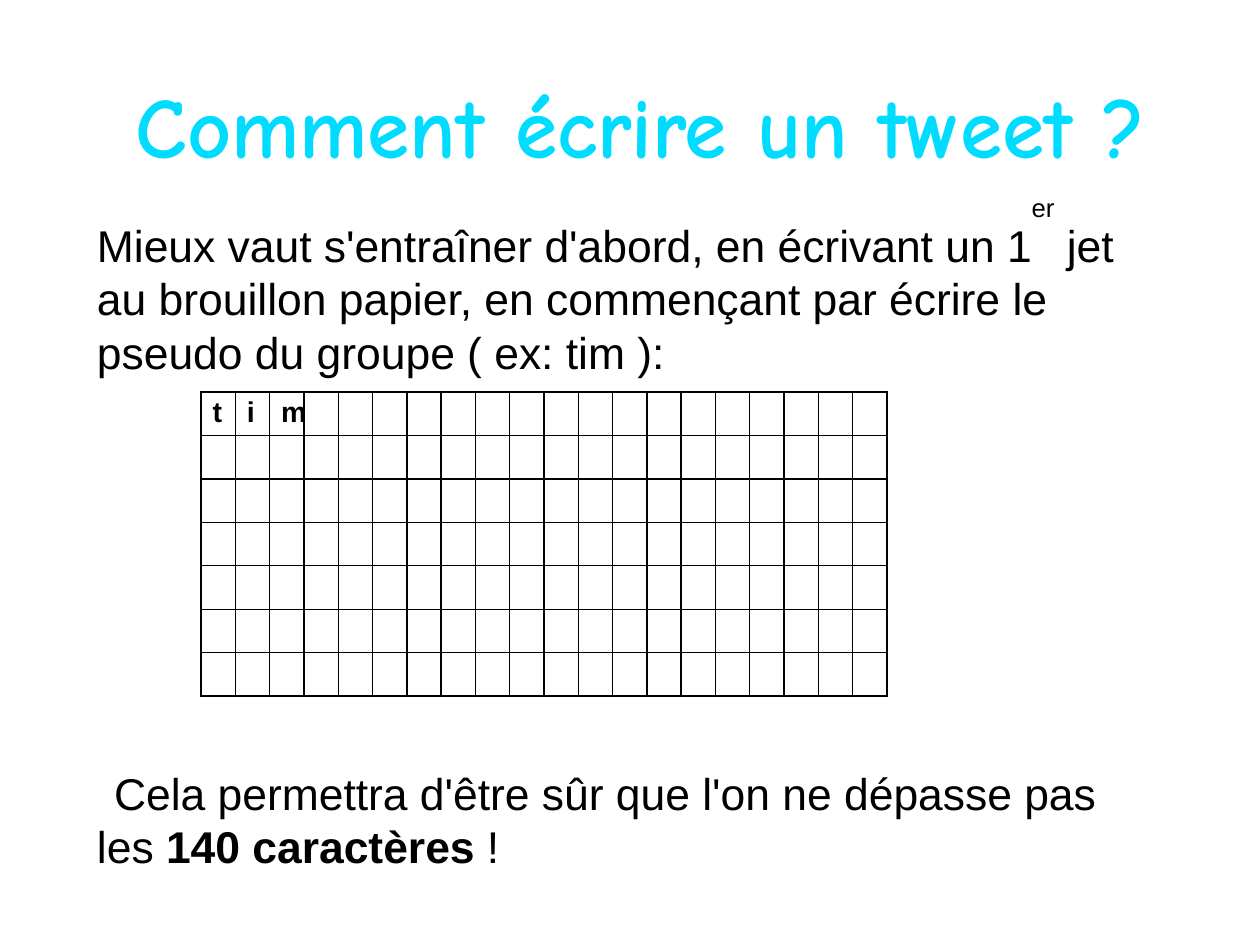
from pptx import Presentation
from pptx.dml.color import RGBColor
from pptx.enum.text import MSO_ANCHOR, PP_ALIGN
from pptx.oxml.ns import qn
from pptx.util import Emu, Inches, Pt
from lxml.etree import SubElement


def color(code):
    return RGBColor.from_string(code)


class Page:
    font, ink, paper = "Arial", "000000", "FFFFFF"

    def __init__(self, deck):
        self.slide = deck.slides.add_slide(deck.slide_layouts[6])

    def style(self, run, size, bold=False, font=None, ink=None):
        run.font.size = Pt(size)
        run.font.bold = bold
        run.font.name = font or self.font
        run.font.color.rgb = color(ink or self.ink)

    def text(self, box, parts, size, bold=(), **look):
        """Add one paragraph made of parts; bold lists the bold part numbers."""
        shape = self.slide.shapes.add_textbox(*map(Inches, box))
        shape.text_frame.word_wrap = True
        para = shape.text_frame.paragraphs[0]
        for i, part in enumerate(parts):
            run = para.add_run()
            run.text = part
            self.style(run, size, i in bold, **look)
        return shape.text_frame, para

    def border(self, cell):
        props = cell._tc.get_or_add_tcPr()
        for side in ("a:lnL", "a:lnR", "a:lnT", "a:lnB"):
            line = SubElement(props, qn(side), w=str(Pt(1)))
            fill = SubElement(line, qn("a:solidFill"))
            SubElement(fill, qn("a:srgbClr"), val=self.ink)

    def grid(self, left, top, rows, cols, width, height, word):
        """Add a letter grid with word spelled out in its first row."""
        table = self.slide.shapes.add_table(
            rows, cols, Inches(left), Inches(top),
            Inches(cols * width), Inches(rows * height)).table
        for col in table.columns:
            col.width = Inches(width)
        for row in table.rows:
            row.height = Inches(height)
        for cell in table.iter_cells():
            cell.margin_top = cell.margin_bottom = Inches(0.04)
            self.border(cell)
            cell.fill.solid()
            cell.fill.fore_color.rgb = color(self.paper)
        for i, char in enumerate(word):
            frame = table.cell(0, i).text_frame
            frame.text = char
            self.style(frame.paragraphs[0].runs[0], 18, True)


def main():
    deck = Presentation()
    # Slide of 28 by 21 cm, in the usual whole units
    deck.slide_width = Emu(10080625)
    deck.slide_height = Emu(7559675)
    page = Page(deck)

    # Title
    frame, para = page.text((0.39, 0.59, 10.43, 1.14), ["Comment écrire un tweet ?"],
                            54, bold=[0], font="Comic Neue", ink="00DCFF")
    frame.vertical_anchor = MSO_ANCHOR.MIDDLE
    frame.margin_bottom = Inches(0.19)
    para.alignment = PP_ALIGN.CENTER

    # Advice, with a raised ordinal ending
    frame, para = page.text(
        (0.75, 1.63, 9.45, 1.75),
        ["Mieux vaut s'entraîner d'abord, en écrivant un 1", "er",
         " jet au brouillon papier, en commençant par écrire le "
         "pseudo du groupe ( ex: tim ):"], 28)
    para.runs[1].font._element.set("baseline", "101000")

    # Letter grid
    page.grid(1.76, 3.43, rows=7, cols=20, width=0.3, height=0.38, word="tim")

    # Closing remark, first line indented
    frame, para = page.text(
        (0.75, 6.65, 9.45, 1.05),
        ["Cela permettra d'être sûr que l'on ne dépasse pas les ",
         "140 caractères ", "!"], 28, bold=[1])
    para._p.get_or_add_pPr().set("indent", str(Inches(0.15)))

    deck.save("out.pptx")


if __name__ == "__main__":
    main()
